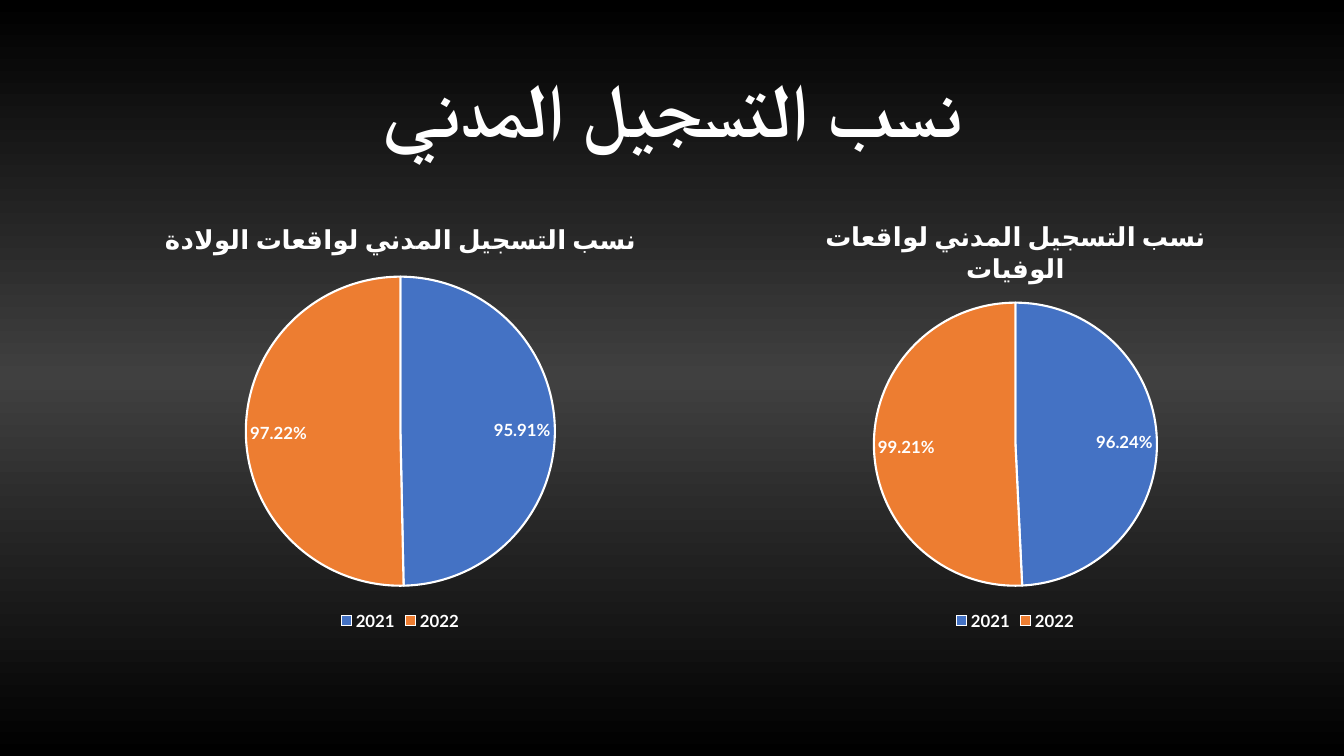
from copy import deepcopy
from lxml import etree
from pptx import Presentation
from pptx import util as u
from pptx.chart import data as cd
from pptx.dml import color as dc
from pptx.enum import chart as ce, text as te
from pptx.oxml import ns

HEAD = "نسب التسجيل المدني"
YEARS = ["2021", "2022"]
PIES = [
    (["نسب التسجيل المدني لواقعات الولادة"], [0.9591, 0.9722]),
    (["نسب التسجيل المدني لواقعات", "الوفيات"], [0.9624, 0.9921]),
]
WHITE = dc.RGBColor(0xFF, 0xFF, 0xFF)
BLACK = dc.RGBColor(0, 0, 0)
GREY = dc.RGBColor(0x40, 0x40, 0x40)
BLUE = dc.RGBColor(0x44, 0x72, 0xC4)
ORANGE = dc.RGBColor(0xED, 0x7D, 0x31)
FACE = {"name": "Lato", "bold": True}
LEFT, TOP, WIDE, HIGH = 2.34, 5.08, 15.5, 10.92


def put(obj, **vals):
    for key, val in vals.items():
        setattr(obj, key, val)


def style(font, size):
    put(font, size=u.Pt(size), **FACE)
    font.color.rgb = WHITE


def write(frame, lines, size, gap=None):
    for idx, words in enumerate(lines):
        para = frame.add_paragraph() if idx else frame.paragraphs[0]
        put(para, alignment=te.PP_ALIGN.CENTER, line_spacing=gap)
        para._p.get_or_add_pPr().set("rtl", "1")
        run = para.add_run()
        run.text = words
        style(run.font, size)
        etree.SubElement(run._r.get_or_add_rPr(), ns.qn("a:cs"),
                         typeface=FACE["name"])


def draw(slide, spot, lines, vals):
    data = cd.CategoryChartData(number_format="0.00%")
    data.categories = YEARS
    data.add_series("Series 1", vals)
    chart = slide.shapes.add_chart(
        ce.XL_CHART_TYPE.PIE, u.Cm(LEFT + spot * WIDE), u.Cm(TOP),
        u.Cm(WIDE), u.Cm(HIGH), data).chart
    style(chart.font, 10)
    put(chart, has_title=True, has_legend=True)
    write(chart.chart_title.text_frame, lines, 18.6)
    chart.chart_title.include_in_layout = False
    put(chart.legend, position=ce.XL_LEGEND_POSITION.BOTTOM,
        include_in_layout=False)
    style(chart.legend.font, 12)
    plot = chart.plots[0]
    put(plot, vary_by_categories=True)
    series = plot.series[0]
    for idx, tint in enumerate([BLUE, ORANGE]):
        form = series.points[idx].format
        form.fill.solid()
        form.fill.fore_color.rgb = tint
        form.line.color.rgb = WHITE
        form.line.width = u.Pt(1.5)
    tags = series.data_labels
    put(tags, show_value=True, show_percentage=False, number_format="0.00%",
        number_format_is_linked=False,
        position=ce.XL_LABEL_POSITION.BEST_FIT)
    style(tags.font, 12)


def main():
    deck = Presentation()
    put(deck, slide_width=u.Cm(33.87), slide_height=u.Cm(19.05))
    slide = deck.slides.add_slide(deck.slide_layouts[6])

    fill = slide.background.fill
    fill.gradient()
    fill.gradient_angle = 90
    stops = slide.element.find(".//" + ns.qn("a:gsLst"))
    stops.insert(1, deepcopy(stops[0]))
    for idx, tint in enumerate([BLACK, GREY, BLACK]):
        stop = fill.gradient_stops[idx]
        stop.color.rgb = tint
        stop.position = idx / 2

    box = slide.shapes.add_textbox(
        u.Cm(LEFT), u.Cm(1.02), u.Cm(29.21), u.Cm(3.68))
    put(box.text_frame, word_wrap=True, vertical_anchor=te.MSO_ANCHOR.MIDDLE)
    write(box.text_frame, [HEAD], 54, 0.9)

    for spot, (lines, vals) in enumerate(PIES):
        draw(slide, spot, lines, vals)
    deck.save("out.pptx")


if __name__ == "__main__":
    main()
